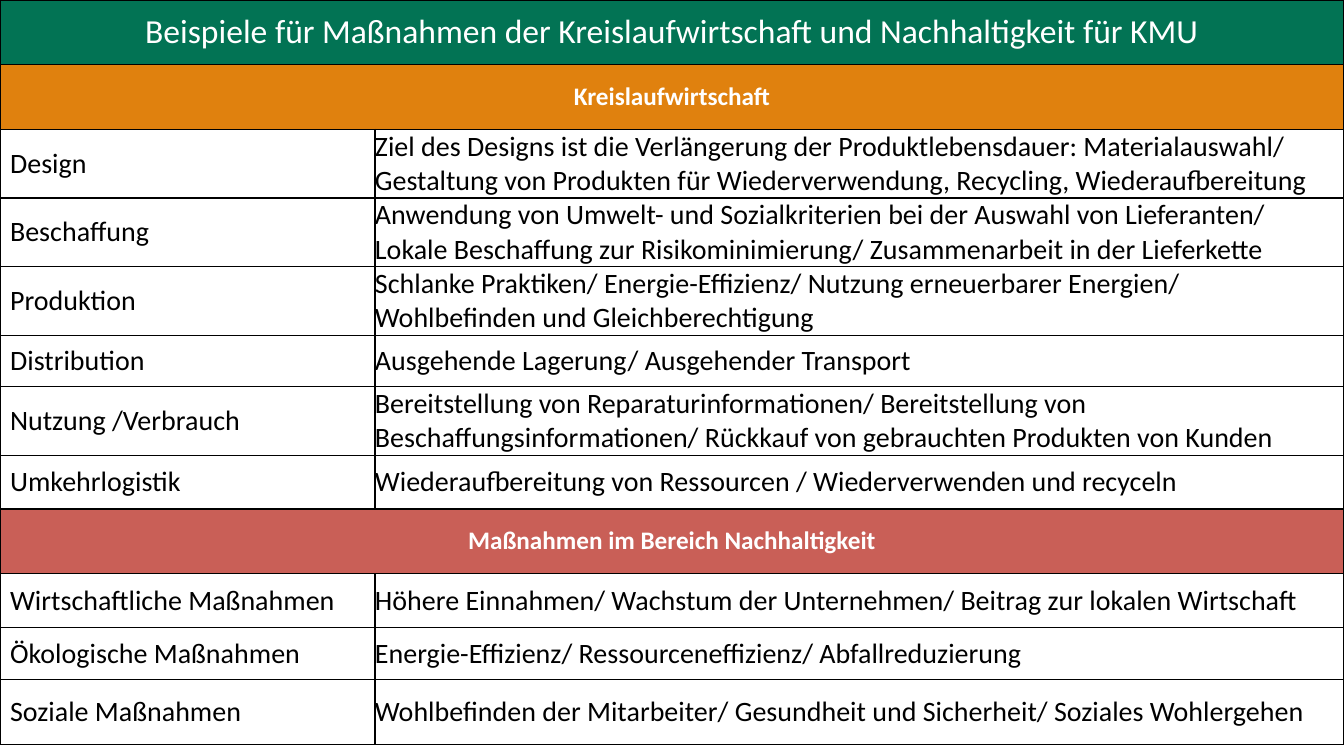
from lxml.etree import SubElement
from pptx import Presentation
from pptx.dml.color import RGBColor as RGB
from pptx.enum.text import MSO_ANCHOR as ANCHOR, PP_ALIGN as ALIGN
from pptx.oxml.ns import qn
from pptx.util import Cm, Pt

COLORS = {
    "green": "027354",
    "orange": "E0810E",
    "red": "C95F57",
    "white": "FFFFFF",
    "black": "000000",
}
COL_WIDTHS = (9.45, 24.42)
BAND_HEIGHT = 1.63

TITLE = "Beispiele für Maßnahmen der Kreislaufwirtschaft und Nachhaltigkeit für KMU"
# Each section: heading, colour, rows of (height in cm, area, measures)
SECTIONS = [
    ("Kreislaufwirtschaft", "orange", [
        (1.37, "Design",
         "Ziel des Designs ist die Verlängerung der Produktlebensdauer: Materialauswahl/ "
         "Gestaltung von Produkten für Wiederverwendung, Recycling, Wiederaufbereitung"),
        (1.4, "Beschaffung",
         "Anwendung von Umwelt- und Sozialkriterien bei der Auswahl von Lieferanten/ "
         "Lokale Beschaffung zur Risikominimierung/ Zusammenarbeit in der Lieferkette"),
        (1.45, "Produktion",
         "Schlanke Praktiken/ Energie-Effizienz/ Nutzung erneuerbarer Energien/ "
         "Wohlbefinden und Gleichberechtigung"),
        (1.3, "Distribution", "Ausgehende Lagerung/ Ausgehender Transport"),
        (1.63, "Nutzung /Verbrauch",
         "Bereitstellung von Reparaturinformationen/ Bereitstellung von "
         "Beschaffungsinformationen/ Rückkauf von gebrauchten Produkten von Kunden"),
        (1.35, "Umkehrlogistik",
         "Wiederaufbereitung von Ressourcen / Wiederverwenden und recyceln"),
    ]),
    ("Maßnahmen im Bereich Nachhaltigkeit", "red", [
        (1.35, "Wirtschaftliche Maßnahmen",
         "Höhere Einnahmen/ Wachstum der Unternehmen/ Beitrag zur lokalen Wirtschaft"),
        (1.32, "Ökologische Maßnahmen",
         "Energie-Effizienz/ Ressourceneffizienz/ Abfallreduzierung"),
        (1.63, "Soziale Maßnahmen",
         "Wohlbefinden der Mitarbeiter/ Gesundheit und Sicherheit/ Soziales Wohlergehen"),
    ]),
]


def add_borders(cell):
    tcPr = cell._tc.get_or_add_tcPr()
    for side in ("lnL", "lnR", "lnT", "lnB"):
        ln = SubElement(tcPr, qn(f"a:{side}"), w=str(Pt(1)))
        fill = SubElement(ln, qn("a:solidFill"))
        SubElement(fill, qn("a:srgbClr"), val=COLORS["black"])


def style_cell(cell, fill):
    """Borders must precede the fill in the cell properties."""
    add_borders(cell)
    cell.fill.solid()
    cell.fill.fore_color.rgb = RGB.from_string(COLORS[fill])
    cell.vertical_anchor = ANCHOR.MIDDLE


def write_cell(cell, text, size, color, bold=False, align=ALIGN.LEFT):
    cell.text = text
    p = cell.text_frame.paragraphs[0]
    p.alignment = align
    font = p.runs[0].font
    font.name, font.size, font.bold = "Calibri", Pt(size), bold
    font.color.rgb = RGB.from_string(COLORS[color])


def fill_band(row, text, fill, size, bold):
    """Merge a row into one coloured heading."""
    row.height = Cm(BAND_HEIGHT)
    left, right = row.cells
    for cell in (left, right):
        style_cell(cell, fill)
    left.merge(right)
    write_cell(left, text, size, "white", bold, ALIGN.CENTER)


def fill_measure(row, height, area, measures):
    row.height = Cm(height)
    left, right = row.cells
    for cell, text in ((left, area), (right, measures)):
        style_cell(cell, "white")
        write_cell(cell, text, 20, "black")
    right.margin_left = right.margin_right = 0
    right.margin_top = right.margin_bottom = 0


def add_measures_table(s):
    n_rows = 1 + sum(1 + len(measures) for _, _, measures in SECTIONS)
    frame = s.shapes.add_table(n_rows, 2, 0, 0, Cm(sum(COL_WIDTHS)), Cm(18.69))
    table = frame.table
    table.first_row = table.horz_banding = False
    for col, width in zip(table.columns, COL_WIDTHS):
        col.width = Cm(width)

    rows = iter(table.rows)
    fill_band(next(rows), TITLE, "green", 24, False)
    for heading, color, measures in SECTIONS:
        fill_band(next(rows), heading, color, 18, True)
        for measure in measures:
            fill_measure(next(rows), *measure)


def main():
    prs = Presentation()
    prs.slide_width, prs.slide_height = Cm(33.87), Cm(19.05)
    s = prs.slides.add_slide(prs.slide_layouts[6])
    add_measures_table(s)
    prs.save("out.pptx")


if __name__ == "__main__":
    main()
